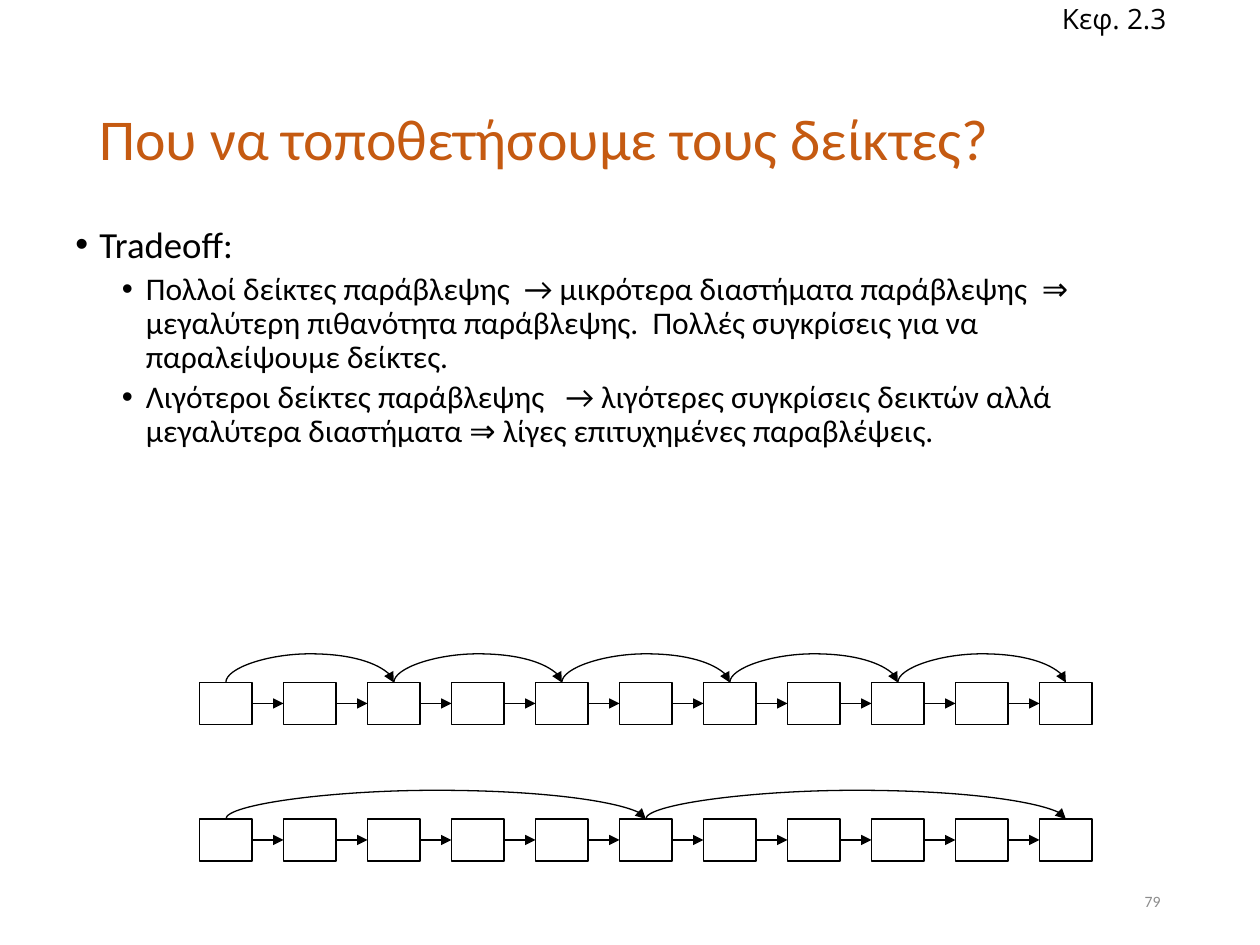
import pptx
import pptx.util
import pptx.dml.color
import pptx.enum.shapes
import pptx.enum.text
import pptx.oxml
import pptx.oxml.ns

Inches, Pt = pptx.util.Inches, pptx.util.Pt
qn = pptx.oxml.ns.qn
ANCHOR, ALIGN = pptx.enum.text.MSO_ANCHOR, pptx.enum.text.PP_ALIGN
CONNECTOR = pptx.enum.shapes.MSO_CONNECTOR
RECTANGLE = pptx.enum.shapes.MSO_SHAPE.RECTANGLE


def paint(target, color):
    target.rgb = pptx.dml.color.RGBColor.from_string(color)


def write(paragraph, text, size, color, font="Calibri"):
    run = paragraph.add_run()
    run.text = text
    run.font.size = Pt(size)
    run.font.name = font
    paint(run.font.color, color)


deck = pptx.Presentation()
deck.slide_width, deck.slide_height = Inches(10), Inches(7.5)
slide = deck.slides.add_slide(deck.slide_layouts[5])
shapes = slide.shapes

# Title
title = shapes.title
title.left, title.top = Inches(0.69), Inches(0.4)
title.width, title.height = Inches(8.62), Inches(1.45)
title.text_frame.auto_size = pptx.enum.text.MSO_AUTO_SIZE.NONE
title.text_frame.vertical_anchor = ANCHOR.MIDDLE
heading = title.text_frame.paragraphs[0]
heading.alignment = ALIGN.LEFT
heading.line_spacing = 0.9
write(heading, "Που να τοποθετήσουμε τους δείκτες?", 33, "C55A11")

# Tradeoff bullets: level, text
tradeoff = [
    (0, "Tradeoff:"),
    (1, "Πολλοί δείκτες παράβλεψης  → μικρότερα διαστήματα παράβλεψης  ⇒ "
        "μεγαλύτερη πιθανότητα παράβλεψης.  Πολλές συγκρίσεις για να "
        "παραλείψουμε δείκτες."),
    (1, "Λιγότεροι δείκτες παράβλεψης   → λιγότερες συγκρίσεις δεικτών αλλά "
        "μεγαλύτερα διαστήματα ⇒ λίγες επιτυχημένες παραβλέψεις."),
]
level_styles = [(0.19, 7.5, 21), (0.56, 3.8, 18)]  # indent, space before, size
body = shapes.add_textbox(Inches(0.5), Inches(1.75), Inches(8.75), Inches(2.63)).text_frame
body.word_wrap = True
for index, (level, text) in enumerate(tradeoff):
    indent, space, size = level_styles[level]
    point = body.add_paragraph() if index else body.paragraphs[0]
    point.level = level
    point.line_spacing = 0.9
    point.space_before = Pt(space)
    properties = point._p.get_or_add_pPr()
    properties.set("marL", str(Inches(indent)))
    properties.set("indent", str(Inches(-0.19)))
    for tag, name, value in (("a:buFont", "typeface", "Arial"), ("a:buChar", "char", "•")):
        pptx.oxml.ns  # bullet parts follow the spacing elements
        properties.makeelement(qn(tag), {})
        bullet_part = properties.makeelement(qn(tag), {name: value})
        properties.append(bullet_part)
    write(point, text, size, "000000")

# Page number
page = shapes.add_textbox(Inches(7.06), Inches(6.95), Inches(2.25), Inches(0.4)).text_frame
page.word_wrap = True
page.vertical_anchor = ANCHOR.MIDDLE
page.paragraphs[0].alignment = ALIGN.RIGHT
write(page.paragraphs[0], "79", 9, "8C8C8C")

# Linked lists: row top and number of nodes that each skip pointer spans
node_count, first_left, pitch = 11, 19 / 12, 2 / 3
node_width, node_height = 5 / 12, 1 / 3
arrows = []
for top, skip in ((65 / 12, 2), (6.5, 5)):
    middle = top + node_height / 2
    for index in range(node_count):
        left = first_left + index * pitch
        node = shapes.add_shape(RECTANGLE, Inches(left), Inches(top),
                                Inches(node_width), Inches(node_height))
        node.shadow.inherit = False
        node.fill.background()
        paint(node.line.color, "000000")
        node.line.width = Pt(0.75)
        if index < node_count - 1:
            arrows.append(shapes.add_connector(
                CONNECTOR.STRAIGHT, Inches(left + node_width), Inches(middle),
                Inches(left + pitch), Inches(middle)))

    # Skip pointers: upright curves turned by 90 degrees to arch over the nodes
    span = skip * pitch
    for index in range(0, node_count - 1, skip):
        center = first_left + node_width / 2 + index * pitch + span / 2
        arch = shapes.add_connector(CONNECTOR.CURVE, Inches(center), Inches(top - span / 2),
                                    Inches(center), Inches(top + span / 2))
        arch.width = pptx.util.Emu(1588)
        transform = arch._element.spPr.find(qn("a:xfrm"))
        transform.set("rot", "5400000")
        transform.set("flipV", "1")
        guides = arch._element.spPr.find(qn("a:prstGeom")).get_or_add_avLst()
        guides.append(guides.makeelement(qn("a:gd"), {"name": "adj1", "fmla": "val -14400000"}))
        arrows.append(arch)

# Arrow style
for arrow in arrows:
    paint(arrow.line.color, "000000")
    arrow.line.width = Pt(0.75)
    line = arrow.line._get_or_add_ln()
    line.append(line.makeelement(qn("a:tailEnd"), {"type": "triangle"}))
    outline = arrow._element.spPr
    outline.append(outline.makeelement(qn("a:effectLst"), {}))

# Chapter reference
chapter = shapes.add_textbox(Inches(8.33), Inches(-0.04), Inches(1.1), Inches(0.37)).text_frame
chapter.word_wrap = False
chapter.auto_size = pptx.enum.text.MSO_AUTO_SIZE.SHAPE_TO_FIT_TEXT
chapter.vertical_anchor = ANCHOR.MIDDLE
write(chapter.paragraphs[0], "Κεφ. 2.3", 16, "000000", "Open Sans")

deck.save("out.pptx")
